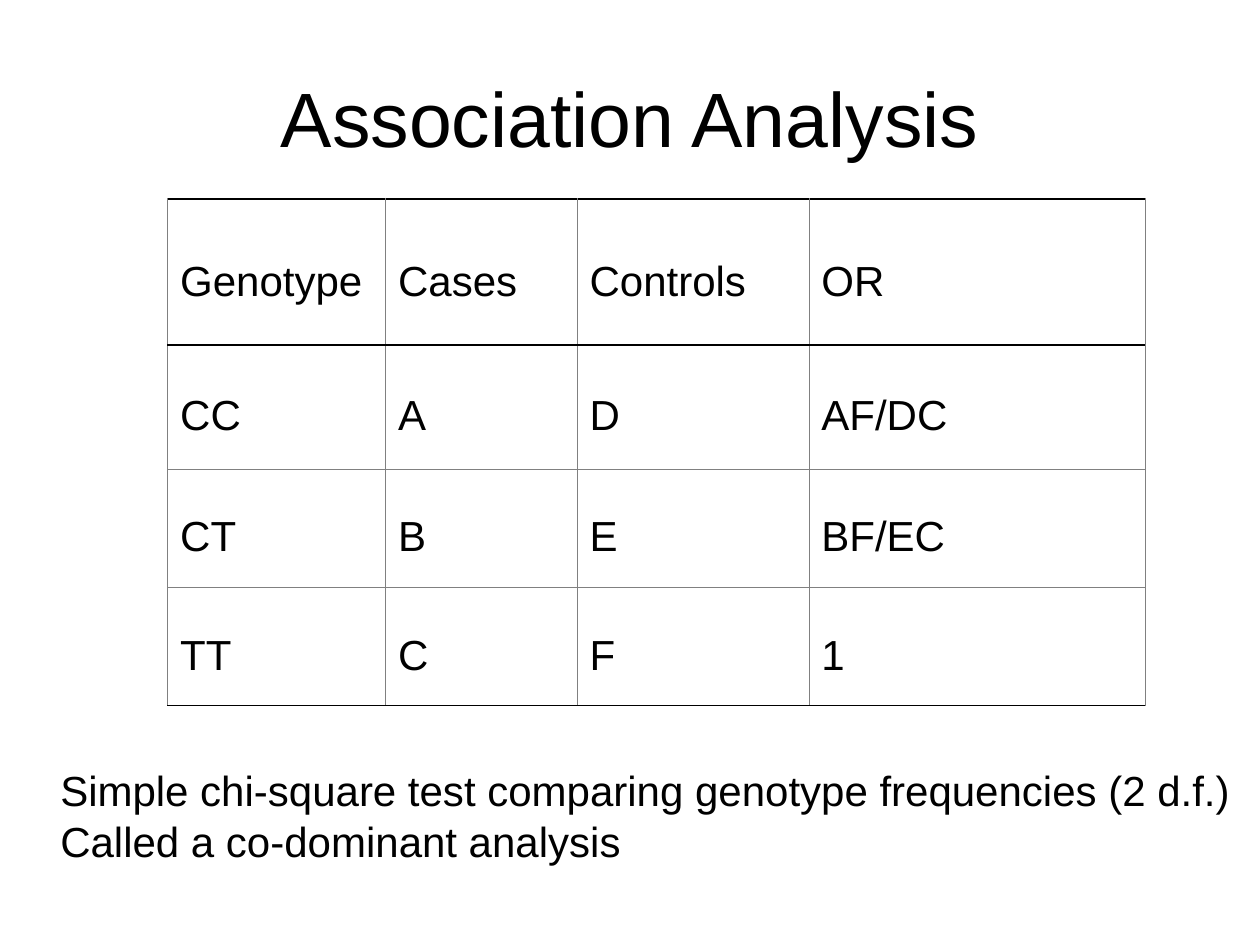
from lxml.etree import SubElement
from pptx import Presentation
from pptx.dml.color import RGBColor
from pptx.enum.text import MSO_ANCHOR, MSO_AUTO_SIZE, PP_ALIGN
from pptx.oxml.ns import qn
from pptx.util import Inches, Pt

COLORS = {"text": "000000", "rule": "000000", "grid": "808080"}
FONT = "Arial"
HEADING = ("Association Analysis",)
GENOTYPES = [
    ("Genotype", "Cases", "Controls", "OR"),
    ("CC", "A", "D", "AF/DC"),
    ("CT", "B", "E", "BF/EC"),
    ("TT", "C", "F", "1"),
]
COLUMN_WIDTHS = (1.73, 1.52, 1.84, 2.67)
ROW_HEIGHTS = (1.16, 0.98, 0.94, 0.94)
NOTES = (
    "Simple chi-square test comparing genotype frequencies (2 d.f.)",
    "Called a co-dominant analysis",
)


def write_lines(frame, lines, size, align=PP_ALIGN.LEFT):
    frame.text = "\n".join(lines)
    for paragraph in frame.paragraphs:
        paragraph.alignment = align
        for run in paragraph.runs:
            run.font.name = FONT
            run.font.size = Pt(size)
            run.font.color.rgb = RGBColor.from_string(COLORS["text"])


def add_border(cell, side, color, width):
    line = SubElement(cell._tc.get_or_add_tcPr(), qn(f"a:ln{side}"), w=str(Pt(width)))
    fill = SubElement(line, qn("a:solidFill"))
    SubElement(fill, qn("a:srgbClr"), val=COLORS[color])


def place_title(slide, left, top, width, height):
    title = slide.shapes.title
    title.left, title.top, title.width, title.height = left, top, width, height
    title.text_frame.vertical_anchor = MSO_ANCHOR.MIDDLE
    write_lines(title.text_frame, HEADING, 44, PP_ALIGN.CENTER)


def format_cell(cell, text, row):
    write_lines(cell.text_frame, (text,), 24)
    paragraph = cell.text_frame.paragraphs[0]
    paragraph.line_spacing = 0.76
    paragraph.space_before = Pt(6)
    cell.vertical_anchor = MSO_ANCHOR.MIDDLE
    cell.margin_left = cell.margin_right = Inches(0.1)
    cell.margin_top, cell.margin_bottom = Inches(0.26), Inches(0.05)

    # Black rules frame the header and close the table; the rest is a thin grid
    rule, grid = ("rule", 1), ("grid", 0.06)
    borders = {
        "L": grid,
        "R": grid,
        "T": rule if row <= 1 else grid,
        "B": rule if row in (0, len(GENOTYPES) - 1) else grid,
    }
    for side, style in borders.items():
        add_border(cell, side, *style)
    cell.fill.background()


def place_genotype_table(slide, left, top, width, height):
    table = slide.shapes.add_table(
        len(GENOTYPES), len(COLUMN_WIDTHS), left, top, width, height
    ).table
    table.first_row = table.horz_banding = False
    for column, column_width in zip(table.columns, COLUMN_WIDTHS):
        column.width = Inches(column_width)
    for row, row_height in zip(table.rows, ROW_HEIGHTS):
        row.height = Inches(row_height)
    for r, values in enumerate(GENOTYPES):
        for c, value in enumerate(values):
            format_cell(table.cell(r, c), value, r)


def place_notes(slide, left, top, width, height):
    frame = slide.shapes.add_textbox(left, top, width, height).text_frame
    frame.word_wrap = False
    frame.auto_size = MSO_AUTO_SIZE.SHAPE_TO_FIT_TEXT
    write_lines(frame, NOTES, 24)


def main():
    deck = Presentation()
    deck.slide_width, deck.slide_height = Inches(10), Inches(7.5)
    slide = deck.slides.add_slide(deck.slide_layouts[5])

    place_title(slide, Inches(0.5), Inches(0.3), Inches(9), Inches(1.25))
    place_genotype_table(
        slide, Inches(1.33), Inches(1.58), Inches(sum(COLUMN_WIDTHS)), Inches(sum(ROW_HEIGHTS))
    )
    place_notes(slide, Inches(0.38), Inches(6.02), Inches(9.48), Inches(0.9))

    deck.save("out.pptx")


if __name__ == "__main__":
    main()
